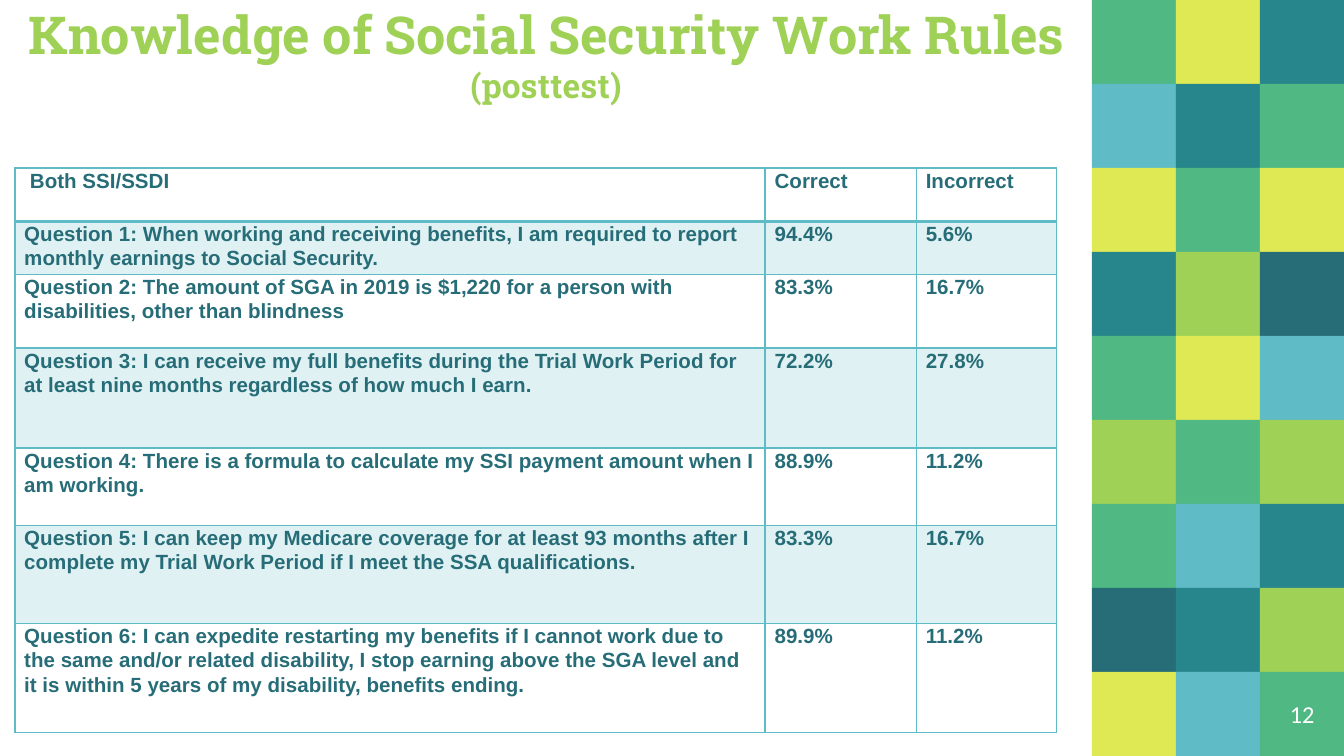
from lxml.etree import SubElement
from pptx import Presentation
from pptx.dml.color import RGBColor
from pptx.enum.shapes import MSO_SHAPE as Shape
from pptx.enum.text import MSO_ANCHOR as Anchor, MSO_AUTO_SIZE as AutoSize, PP_ALIGN as Align
from pptx.oxml.ns import qn
from pptx.util import Pt

TITLE = [("Knowledge of Social Security Work Rules", 28), ("(posttest)", 18)]
PAGE_NUMBER = "12"
ROWS = [  # height, cells
    (28.5, ("\u00a0Both SSI/SSDI", "Correct", "Incorrect")),
    (28.5, ("Question 1: When working and receiving benefits, I am required to report "
            "monthly earnings to Social Security.", "94.4%", "5.6%")),
    (39.5, ("Question 2: The amount of SGA in 2019 is $1,220 for a person with "
            "disabilities, other than blindness", "83.3%", "16.7%")),
    (53.5, ("Question 3: I can receive my full benefits during the Trial Work Period for "
            "at least nine months regardless of how much I earn.", "72.2%", "27.8%")),
    (41.5, ("Question 4: There is a formula to calculate my SSI payment amount when "
            "I am working.", "88.9%", "11.2%")),
    (52.5, ("Question 5: I can keep my Medicare coverage for at least 93 months after I "
            "complete my Trial Work Period if I meet the SSA qualifications.", "83.3%", "16.7%")),
    (58.5, ("Question 6: I can expedite restarting my benefits if I cannot work due to "
            "the same and/or related disability, I stop earning above the SGA level and "
            "it is within 5 years of my disability, benefits ending.", "89.9%", "11.2%")),
]
COLUMNS = (402, 81, 75)
LIME, DARK, SKY, WHITE = "9ED155", "266D78", "5FBBC5", "FFFFFF"
TILE_COLORS = {"L": LIME, "D": DARK, "Y": "DFE954", "G": "50B883", "T": "27868B", "S": SKY}
MOSAIC = ("GYT", "STG", "YGY", "TLD", "GYS", "LGL", "GST", "DTL", "YSG")
TILE, MOSAIC_LEFT = 45, 585
INSET = 7.2


def rgb(color):
    return RGBColor.from_string(color)


def style(font, name, size, color, bold=False):
    font.name, font.size, font.bold = name, Pt(size), bold
    font.color.rgb = rgb(color)


def set_frame(frame, anchor):
    frame.word_wrap, frame.auto_size = True, AutoSize.NONE
    frame.vertical_anchor = anchor
    frame.margin_left = frame.margin_right = Pt(INSET)
    frame.margin_top = frame.margin_bottom = Pt(INSET)


def set_border(cell, side, width):
    line = SubElement(cell._tc.get_or_add_tcPr(), qn(f"a:ln{side}"), w=str(Pt(width)))
    SubElement(SubElement(line, qn("a:solidFill")), qn("a:srgbClr"), val=SKY)


def add_mosaic(slide):
    for row, letters in enumerate(MOSAIC):
        for column, letter in enumerate(letters):
            tile = slide.shapes.add_shape(Shape.RECTANGLE, Pt(MOSAIC_LEFT + column * TILE),
                                          Pt(row * TILE), Pt(TILE), Pt(TILE))
            tile.shadow.inherit = False
            tile.fill.solid()
            tile.fill.fore_color.rgb = rgb(TILE_COLORS[letter])
            tile.line.fill.background()


def fill_title(title):
    title.left, title.top, title.width, title.height = Pt(0), Pt(10), Pt(MOSAIC_LEFT), Pt(53.5)
    set_frame(title.text_frame, Anchor.BOTTOM)
    para = title.text_frame.paragraphs[0]
    para.alignment = Align.CENTER
    for index, (text, size) in enumerate(TITLE):
        if index:
            para.add_line_break()
        span = para.add_run()
        span.text = text
        style(span.font, "Roboto Slab", size, LIME, bold=True)


def add_page_number(slide):
    box = slide.shapes.add_textbox(Pt(675), Pt(360), Pt(TILE), Pt(TILE))
    set_frame(box.text_frame, Anchor.MIDDLE)
    para = box.text_frame.paragraphs[0]
    para.text, para.alignment = PAGE_NUMBER, Align.CENTER
    style(para.font, "Calibri", 13, WHITE)


def fill_cell(cell, text, row):
    cell.margin_left = cell.margin_right = Pt(5)
    cell.margin_top = cell.margin_bottom = 0
    para = cell.text_frame.paragraphs[0]
    para.text, para.line_spacing = text, 1.07
    style(para.font, "Arial", 11, DARK, bold=True)
    for side in "LRTB":
        under_header = (row, side) in ((0, "B"), (1, "T"))
        set_border(cell, side, 2 if under_header else 1)
    if row % 2:
        cell.fill.solid()
        cell.fill.fore_color.rgb = rgb(SKY)
        color = cell._tc.tcPr.find(qn("a:solidFill")).find(qn("a:srgbClr"))
        SubElement(color, qn("a:alpha"), val="20000")
    else:
        cell.fill.background()


def add_results(slide):
    height = sum(row_height for row_height, _ in ROWS)
    table = slide.shapes.add_table(len(ROWS), len(COLUMNS), Pt(8), Pt(90),
                                   Pt(sum(COLUMNS)), Pt(height)).table
    table.first_row = table.horz_banding = False
    for column, width in zip(table.columns, COLUMNS):
        column.width = Pt(width)
    for row, (row_height, texts) in enumerate(ROWS):
        table.rows[row].height = Pt(row_height)
        for column, text in enumerate(texts):
            fill_cell(table.cell(row, column), text, row)


def main():
    deck = Presentation()
    deck.slide_width, deck.slide_height = Pt(720), Pt(405)
    slide = deck.slides.add_slide(deck.slide_layouts[5])
    add_mosaic(slide)
    fill_title(slide.shapes.title)
    add_page_number(slide)
    add_results(slide)
    deck.save("out.pptx")


if __name__ == "__main__":
    main()
